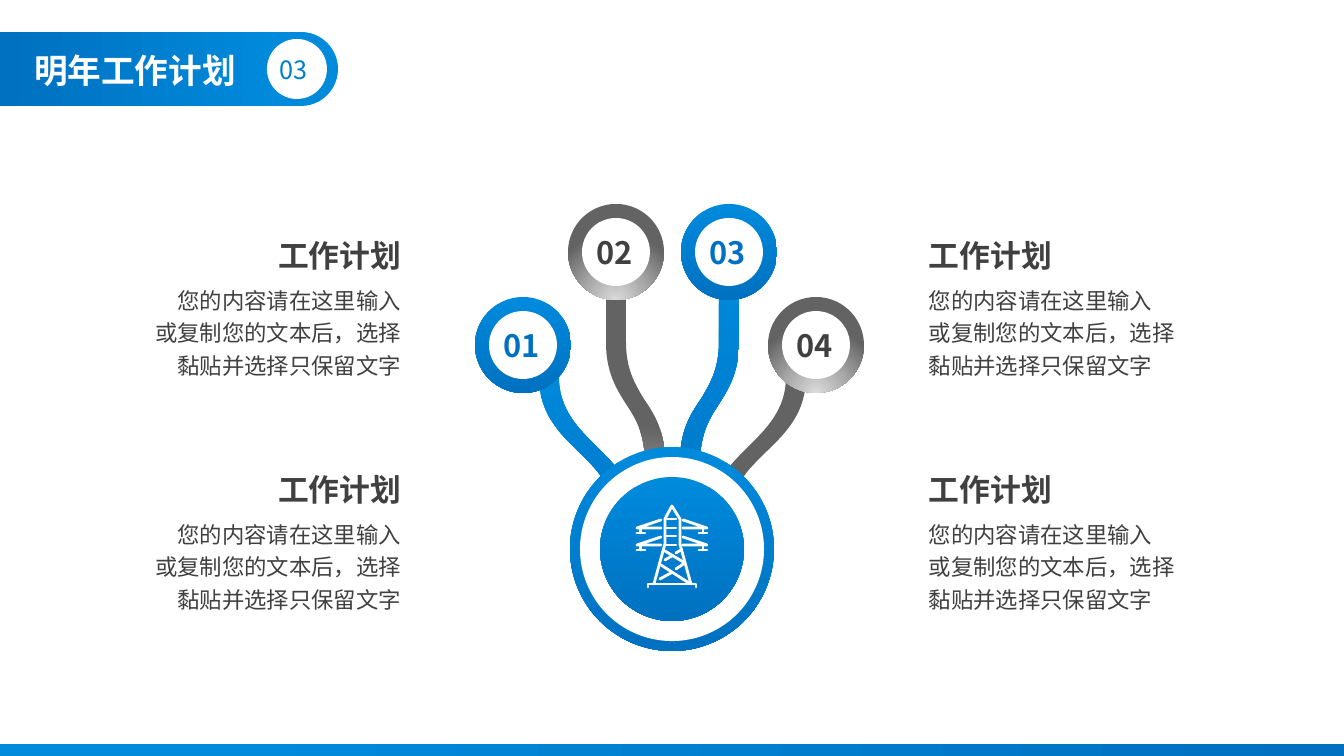
"""Builds the work plan slide with four numbered branches."""
from pptx import Presentation as Deck
from pptx.dml.color import RGBColor as Rgb
from pptx.enum.shapes import MSO_SHAPE as Kind
from pptx.enum.text import MSO_ANCHOR as Anchor, PP_ALIGN as Align
from pptx.oxml import parse_xml
from pptx.oxml.ns import nsdecls, qn
from pptx.util import Pt

FONT = "Noto Sans CJK SC"
WHITE, DARK, BLUE, SKY = "FFFFFF", "404040", "0071C1", "007DCE"
DOWN = ([(0, "008ADC"), (100, BLUE)], 90)
EDGE = ([(16, "008ADC"), (100, "0070C0")], 90)
FOOT = (EDGE[0], 0)
GREY = ([(0, "DBDBDB"), (46, "AAAAAA"), (100, "636363")], None)
GLOW = ('<a:path path="circle"><a:fillToRect l="50000" t="130000" '
        'r="50000" b="-30000"/></a:path>')


def tint(code):
    return Rgb.from_string(code)


def px(num):
    return round(num * 12192000 / 1344)


def trace(steps):
    dots = []
    for step in steps:
        if len(step) == 2:
            dots.append(step)
            continue
        ends = [dots[-1], step[:2], step[2:4], step[4:]]
        for i in range(1, 17):
            t = i / 16
            parts = ((1 - t) ** 3, 3 * t * (1 - t) ** 2, 3 * t * t * (1 - t), t ** 3)
            dots.append(tuple(sum(w * p[k] for w, p in zip(parts, ends)) for k in (0, 1)))
    return dots


class Page:
    def __init__(self, slide):
        self.slide = slide
        self.shapes = slide.shapes

    def paint(self, shape, fill):
        shape.shadow.inherit = False
        shape.line.fill.background()
        if isinstance(fill, str):
            shape.fill.solid()
            shape.fill.fore_color.rgb = tint(fill)
            return
        stops, turn = fill
        marks = "".join(f'<a:gs pos="{pos * 1000}"><a:srgbClr val="{code}"/></a:gs>'
                        for pos, code in stops)
        way = GLOW if turn is None else f'<a:lin ang="{turn * 60000}" scaled="0"/>'
        shape.fill.gradient()
        props = shape._element.spPr
        props.replace(props.find(qn("a:gradFill")), parse_xml(
            f'<a:gradFill {nsdecls("a")} rotWithShape="1">'
            f'<a:gsLst>{marks}</a:gsLst>{way}</a:gradFill>'))

    def block(self, kind, x, y, w, h, fill):
        shape = self.shapes.add_shape(kind, px(x), px(y), px(w), px(h))
        self.paint(shape, fill)
        return shape

    def disc(self, x, y, r, fill):
        return self.block(Kind.OVAL, x - r, y - r, 2 * r, 2 * r, fill)

    def draw(self, lines, close):
        lines = [[(px(x), px(y)) for x, y in line] for line in lines]
        pen = self.shapes.build_freeform(*lines[0][0])
        for i, line in enumerate(lines):
            if i:
                pen.move_to(*line[0])
            pen.add_line_segments(line[1:], close=close)
        return pen.convert_to_shape()

    def stem(self, steps, fill):
        self.paint(self.draw([trace(steps)], True), fill)

    def wire(self, lines, code, width):
        shape = self.draw(lines, False)
        shape.shadow.inherit = False
        shape.fill.background()
        shape.line.color.rgb = tint(code)
        shape.line.width = Pt(width)
        shape.line._ln.set("cap", "rnd")

    def words(self, frame, texts, size, code, bold=False, side=Align.LEFT, gap=1.0):
        frame.word_wrap = True
        frame.vertical_anchor = Anchor.TOP
        for i, text in enumerate(texts):
            para = frame.add_paragraph() if i else frame.paragraphs[0]
            para.alignment, para.line_spacing = side, gap
            run = para.add_run()
            run.text = text
            font = run.font
            font.size, font.bold = Pt(size), bold
            font.color.rgb = tint(code)
            font.name = FONT
            run._r.get_or_add_rPr().append(
                parse_xml(f'<a:ea {nsdecls("a")} typeface="{FONT}"/>'))

    def label(self, x, y, w, h, texts, *style, **more):
        box = self.shapes.add_textbox(px(x), px(y), px(w), px(h))
        self.words(box.text_frame, texts, *style, **more)

    def title(self, x, y, w, h, text, size, code):
        head = self.shapes.title
        head.left, head.top, head.width, head.height = map(px, (x, y, w, h))
        self.words(head.text_frame, [text], size, code, True)
        self.shapes._spTree.append(head._element)


def flip(steps, span):
    return [tuple(span - v if i % 2 == 0 else v for i, v in enumerate(step))
            for step in steps]


def tower():
    mid = 672
    lines = [
        [(654, 584), (665, 544), (665, 519), (mid, 506), (680, 519), (680, 544), (691, 584)],
        [(648, 587), (648, 584), (696, 584), (696, 587)],
        [(665, 551), (685, 563), (676, 569)],
        [(676, 553), (681, 550)],
        [(mid, 556), (665, 560)],
        [(661, 565), (689, 583)],
        [(671, 573), (660, 579)],
    ]
    lines += [[(665, y), (676, y)] for y in (519, 528, 536, 545)]
    for drop in (0, 17):
        arm = [(661, 520 + drop), (637, 528 + drop), (661, 528 + drop)]
        post = [(641, 528 + drop), (641, 533 + drop)]
        foot = [(637, 533 + drop), (645, 533 + drop)]
        for line in (arm, post, foot):
            lines += [line, flip(line, 2 * mid)]
    return lines


def main():
    deck = Deck()
    deck.slide_width, deck.slide_height = px(1344), px(756)
    page = Page(deck.slides.add_slide(deck.slide_layouts[5]))

    flag = page.block(Kind.ROUND_2_SAME_RECTANGLE, 132, -100, 74, 338, EDGE)
    flag.rotation = 90
    flag.adjustments[0], flag.adjustments[1] = 0.5, 0
    page.title(24, 45, 262, 52, "明年工作计划", 24, WHITE)
    page.disc(297, 69, 30, WHITE)
    page.label(266, 49, 55, 40, ["03"], 18, SKY, side=Align.CENTER)

    outer = [(613, 598), (613, 512), (613, 485, 597, 470, 580, 453),
             (559, 433, 539, 413, 539, 377), (539, 363), (559, 363), (559, 377),
             (559, 410, 579, 429, 597, 447), (615, 465, 633, 482, 633, 512), (633, 598)]
    inner = [(645, 598), (645, 463), (645, 434, 636, 419, 626, 404),
             (616, 388, 606, 372, 606, 342), (606, 255), (626, 255), (626, 342),
             (626, 369, 635, 384, 644, 399), (655, 415, 665, 431, 665, 463), (665, 598)]
    page.stem(outer, DOWN)
    page.stem(inner, GREY)
    page.stem(flip(inner, 1345), DOWN)
    page.stem(flip(outer, 1345), GREY)

    for r, fill in ((102, DOWN), (92, WHITE), (72, DOWN)):
        page.disc(672, 549, r, fill)
    page.wire(tower(), WHITE, 2)

    rings = [("01", 523, 345, DOWN, BLUE), ("02", 616, 252, GREY, DARK),
             ("03", 729, 252, DOWN, BLUE), ("04", 816, 345, GREY, DARK)]
    for text, x, y, fill, code in rings:
        page.disc(x, y, 48, fill)
        page.disc(x, y, 34, WHITE)
        page.label(x - 32, y - 27, 62, 50, [text], 22, code, True, Align.CENTER, 1.1)

    notes = ["您的内容请在这里输入", "或复制您的文本后，选择黏贴并选择只保留文字"]
    for x, side in ((139, Align.RIGHT), (919, Align.LEFT)):
        for y in (228, 462):
            page.label(x, y, 272, 50, ["工作计划"], 22, DARK, True, side, 1.1)
            page.label(x, y + 49, 272, 107, notes, 16, DARK, False, side, 1.2)

    page.block(Kind.RECTANGLE, 0, 744, 1344, 12, FOOT)
    deck.save("out.pptx")


if __name__ == "__main__":
    main()
